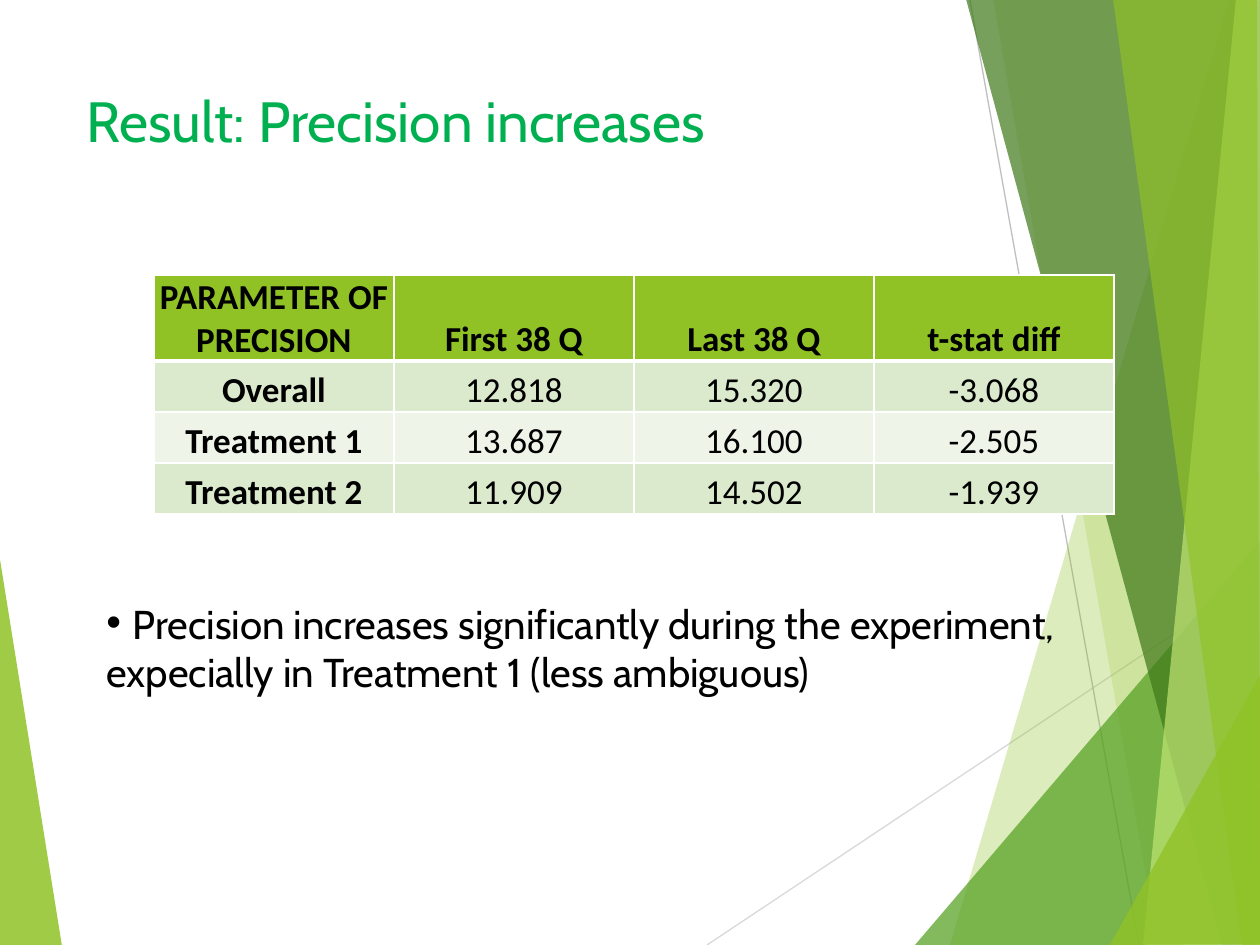
"""Build the slide on rising precision, with its table and faceted green backdrop."""
from dataclasses import dataclass

from lxml import etree
from pptx import Presentation
from pptx.dml.color import RGBColor
from pptx.enum.shapes import MSO_CONNECTOR
from pptx.enum.text import MSO_ANCHOR, PP_ALIGN
from pptx.oxml.ns import qn
from pptx.util import Pt

STRAIGHT = MSO_CONNECTOR.STRAIGHT
MIDDLE = MSO_ANCHOR.MIDDLE
TOP = MSO_ANCHOR.TOP
BOTTOM = MSO_ANCHOR.BOTTOM
CENTER = PP_ALIGN.CENTER
EMU_PER_PX = 914400 / 126


def px(length):
    return round(length * EMU_PER_PX)


@dataclass(frozen=True)
class Theme:
    lime: str = "90C226"
    green: str = "54A021"
    forest: str = "3F7819"
    pale_lime: str = "C0E474"
    band_dark: str = "DBE9CD"
    band_light: str = "EEF4E8"
    title: str = "00B050"
    text: str = "000000"
    border: str = "FFFFFF"
    line_light: str = "D9D9D9"
    line_dark: str = "BFBFBF"
    heading_font: str = "Cabin"
    table_font: str = "Calibri"
    bullet_font: str = "Arial"
    title_size: float = 32.4
    bullet_size: float = 24
    body_size: float = 23
    table_size: float = 20


class SlideBuilder:
    def __init__(self, slide, theme):
        self.slide = slide
        self.shapes = slide.shapes
        self.theme = theme

    def style_font(self, font, name, size, color, bold=False):
        font.name = name
        font.size = Pt(size)
        font.bold = bold
        font.color.rgb = RGBColor.from_string(color)

    def facet(self, points, color, opacity):
        builder = self.shapes.build_freeform(*points[0], scale=EMU_PER_PX)
        builder.add_line_segments(points[1:], close=True)
        shape = builder.convert_to_shape()
        shape.shadow.inherit = False
        shape.line.fill.background()
        shape.fill.solid()
        shape.fill.fore_color.rgb = RGBColor.from_string(color)
        color_element = shape.fill._xPr.find(qn("a:solidFill"))[0]
        etree.SubElement(color_element, qn("a:alpha"), val=str(opacity * 1000))

    def line(self, start, end, color):
        connector = self.shapes.add_connector(STRAIGHT, *map(px, start + end))
        connector.line.color.rgb = RGBColor.from_string(color)
        connector.line.width = Pt(0.75)
        etree.SubElement(connector._element.spPr, qn("a:effectLst"))

    def text_box(self, box, anchor):
        frame = self.shapes.add_textbox(*map(px, box)).text_frame
        frame.word_wrap = True
        frame.vertical_anchor = anchor
        return frame.paragraphs[0]

    def title(self, text, box):
        paragraph = self.text_box(box, MIDDLE)
        paragraph.text = text
        theme = self.theme
        self.style_font(paragraph.font, theme.heading_font, theme.title_size, theme.title)

    def bullet(self, text, box):
        paragraph = self.text_box(box, TOP)
        theme = self.theme
        runs = ((" ", theme.bullet_font, theme.bullet_size),
                (text, theme.heading_font, theme.body_size))
        for content, font, size in runs:
            run = paragraph.add_run()
            run.text = content
            self.style_font(run.font, font, size, theme.text)
        properties = paragraph._p.get_or_add_pPr()
        properties.set("marL", "0")
        properties.set("indent", "0")
        etree.SubElement(properties, qn("a:buFont"), typeface=theme.bullet_font)
        etree.SubElement(properties, qn("a:buChar"), char="•")

    def borders(self, cell, top, bottom):
        properties = cell._tc.get_or_add_tcPr()
        widths = (("a:lnL", 1), ("a:lnR", 1), ("a:lnT", top), ("a:lnB", bottom))
        for index, (tag, width) in enumerate(widths):
            line = etree.Element(qn(tag), w=str(Pt(width)))
            fill = etree.SubElement(line, qn("a:solidFill"))
            etree.SubElement(fill, qn("a:srgbClr"), val=self.theme.border)
            properties.insert(index, line)

    def cell(self, cell, text, row, bold):
        theme = self.theme
        cell.text = text
        cell.vertical_anchor = BOTTOM
        cell.margin_left = cell.margin_right = cell.margin_top = px(1)
        cell.margin_bottom = 0
        paragraph = cell.text_frame.paragraphs[0]
        paragraph.alignment = CENTER
        self.style_font(paragraph.font, theme.table_font, theme.table_size, theme.text, bold)
        band = theme.band_dark if row % 2 else theme.band_light
        cell.fill.solid()
        cell.fill.fore_color.rgb = RGBColor.from_string(band if row else theme.lime)
        self.borders(cell, top=3 if row == 1 else 1, bottom=1 if row else 3)

    def table(self, rows, left, top, column_width, header_height, row_height):
        width = column_width * len(rows[0])
        height = header_height + row_height * (len(rows) - 1)
        box = map(px, (left, top, width, height))
        table = self.shapes.add_table(len(rows), len(rows[0]), *box).table
        for column in table.columns:
            column.width = px(column_width)
        for row, values in enumerate(rows):
            table.rows[row].height = px(row_height if row else header_height)
            for column, text in enumerate(values):
                self.cell(table.cell(row, column), text, row, bold=row == 0 or column == 0)


def main():
    presentation = Presentation()
    presentation.slide_width = px(1260)
    presentation.slide_height = px(945)
    theme = Theme()
    builder = SlideBuilder(presentation.slides.add_slide(presentation.slide_layouts[6]), theme)

    builder.facet([(-1, 553), (62, 946), (-1, 945)], theme.lime, 85)
    builder.line((707, 945), (1261, 576), theme.line_light)
    builder.line((970, 0), (1139, 945), theme.line_dark)
    facets = (
        ([(1229, 0), (950, 945), (1262, 946), (1261, 1)], theme.lime, 30),
        ([(993, -1), (1158, 945), (1261, 945), (1261, -1)], theme.lime, 20),
        ([(915, 945), (1260, 541), (1261, 945)], theme.green, 72),
        ([(966, -1), (1222, 945), (1261, 944), (1261, -1)], theme.forest, 70),
        ([(1236, -1), (1143, 945), (1261, 945), (1260, -1)], theme.pale_lime, 70),
        ([(1113, -1), (1242, 945), (1260, 945), (1257, -1)], theme.lime, 65),
        ([(1110, 945), (1261, 674), (1261, 944)], theme.lime, 80),
    )
    for points, color, opacity in facets:
        builder.facet(points, color, opacity)

    builder.title("Result: Precision increases", (74, 76, 1133, 87))
    rows = (
        ("PARAMETER OF PRECISION", "First 38 Q", "Last 38 Q", "t-stat diff"),
        ("Overall", "12.818", "15.320", "-3.068"),
        ("Treatment 1", "13.687", "16.100", "-2.505"),
        ("Treatment 2", "11.909", "14.502", "-1.939"),
    )
    builder.table(rows, left=154, top=275, column_width=240, header_height=86, row_height=51)
    builder.bullet(
        "Precision increases significantly during the experiment, "
        "expecially in Treatment 1 (less ambiguous)",
        (94, 591, 1081, 115),
    )
    presentation.save("out.pptx")


if __name__ == "__main__":
    main()
